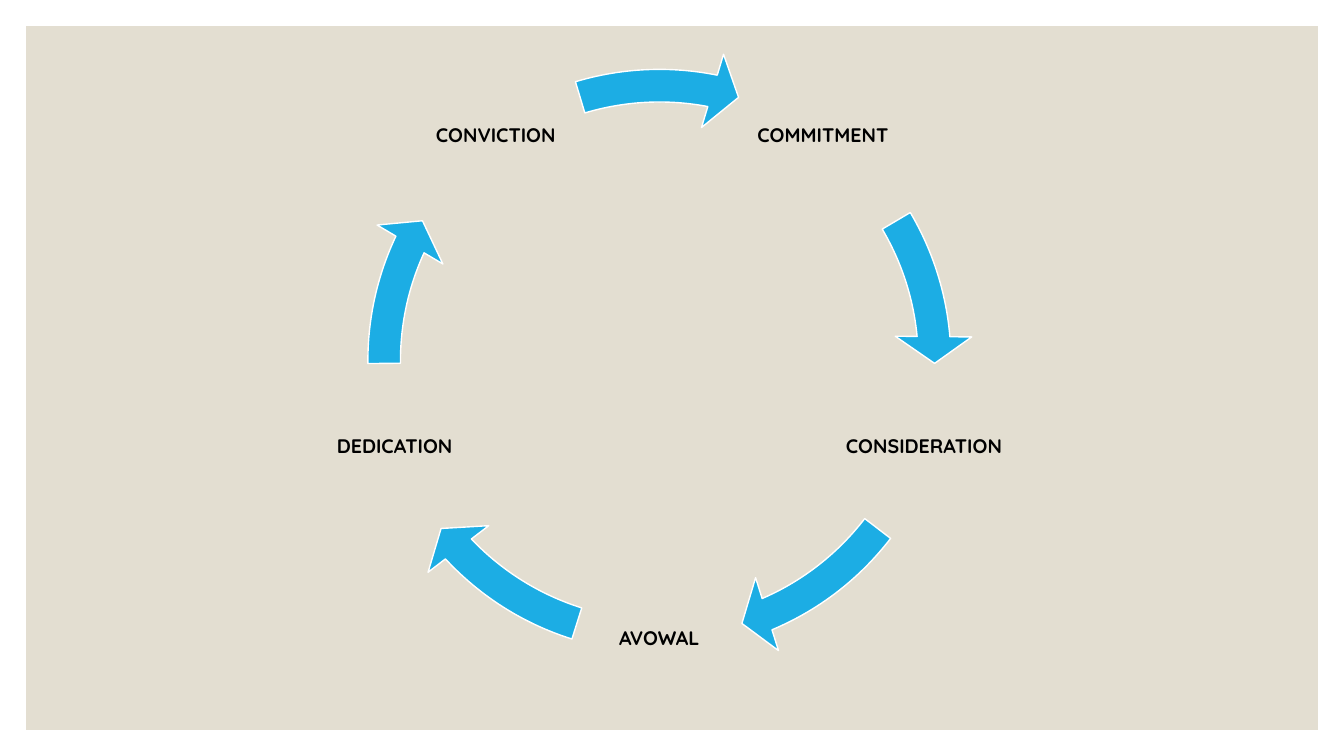
from math import cos, radians, sin
from pptx import Presentation
from pptx.dml.color import RGBColor
from pptx.enum import shapes as kinds, text as txt
from pptx.util import Pt

STEPS = [
    ("COMMITMENT", 329.4, 354.93),
    ("CONSIDERATION", 37.51, 66.96),
    ("AVOWAL", 107.45, 136.9),
    ("DEDICATION", 179.48, 205.02),
    ("CONVICTION", 253.27, 281.14),
]
THEME = {
    "panel": RGBColor.from_string("E3DED1"),
    "arrow": RGBColor.from_string("1CADE4"),
    "edge": RGBColor.from_string("FFFFFF"),
    "ink": RGBColor.from_string("000000"),
    "font": "Quicksand",
    "size": Pt(14),
}
WIDE, HIGH, MARGIN = 960, 540, 18.7
MID_X, MID_Y, RADIUS = 471, 257.8, 198.8
RING, LABEL, INSET = 447.8, 119.5, 1.4
BAND, HEAD, POINT = 0.052, 0.061, 5.59
TURN = 0.6


def center(x, y, side):
    return Pt(x - side / 2), Pt(y - side / 2), Pt(side), Pt(side)


def add_shape(slide, kind, box, fill):
    shape = slide.shapes.add_shape(kind, *box)
    shape.shadow.inherit = False
    shape.fill.solid()
    shape.fill.fore_color.rgb = fill
    shape.line.fill.background()
    return shape


def add_label(slide, word, angle):
    x = MID_X + RADIUS * cos(angle)
    y = MID_Y + RADIUS * sin(angle)
    frame = slide.shapes.add_textbox(*center(x, y, LABEL)).text_frame
    frame.word_wrap = True
    frame.vertical_anchor = txt.MSO_ANCHOR.MIDDLE
    frame.margin_left = frame.margin_right = Pt(INSET)
    frame.margin_top = frame.margin_bottom = Pt(INSET)
    para = frame.paragraphs[0]
    para.text = word
    para.alignment = txt.PP_ALIGN.CENTER
    para.line_spacing = 0.9
    font = para.font
    font.name, font.size, font.bold = THEME["font"], THEME["size"], True
    font.color.rgb = THEME["ink"]


def add_arrow(slide, start, end):
    arrow = add_shape(slide, kinds.MSO_SHAPE.CIRCULAR_ARROW,
                      center(MID_X, MID_Y, RING), THEME["arrow"])
    arrow.line.color.rgb = THEME["edge"]
    arrow.line.width = Pt(1)
    values = BAND, POINT * TURN, end * TURN, start * TURN, HEAD
    for index, value in enumerate(values):
        arrow.adjustments[index] = value


def main():
    deck = Presentation()
    deck.slide_width, deck.slide_height = Pt(WIDE), Pt(HIGH)
    slide = deck.slides.add_slide(deck.slide_layouts[6])
    panel = (Pt(MARGIN), Pt(MARGIN),
             Pt(WIDE - 2 * MARGIN), Pt(HIGH - 2 * MARGIN))
    add_shape(slide, kinds.MSO_SHAPE.RECTANGLE, panel, THEME["panel"])
    step = 360 / len(STEPS)
    for index, (word, start, end) in enumerate(STEPS):
        add_label(slide, word, radians(90 + (index - 2) * step))
        add_arrow(slide, start, end)
    deck.save("out.pptx")


if __name__ == "__main__":
    main()
